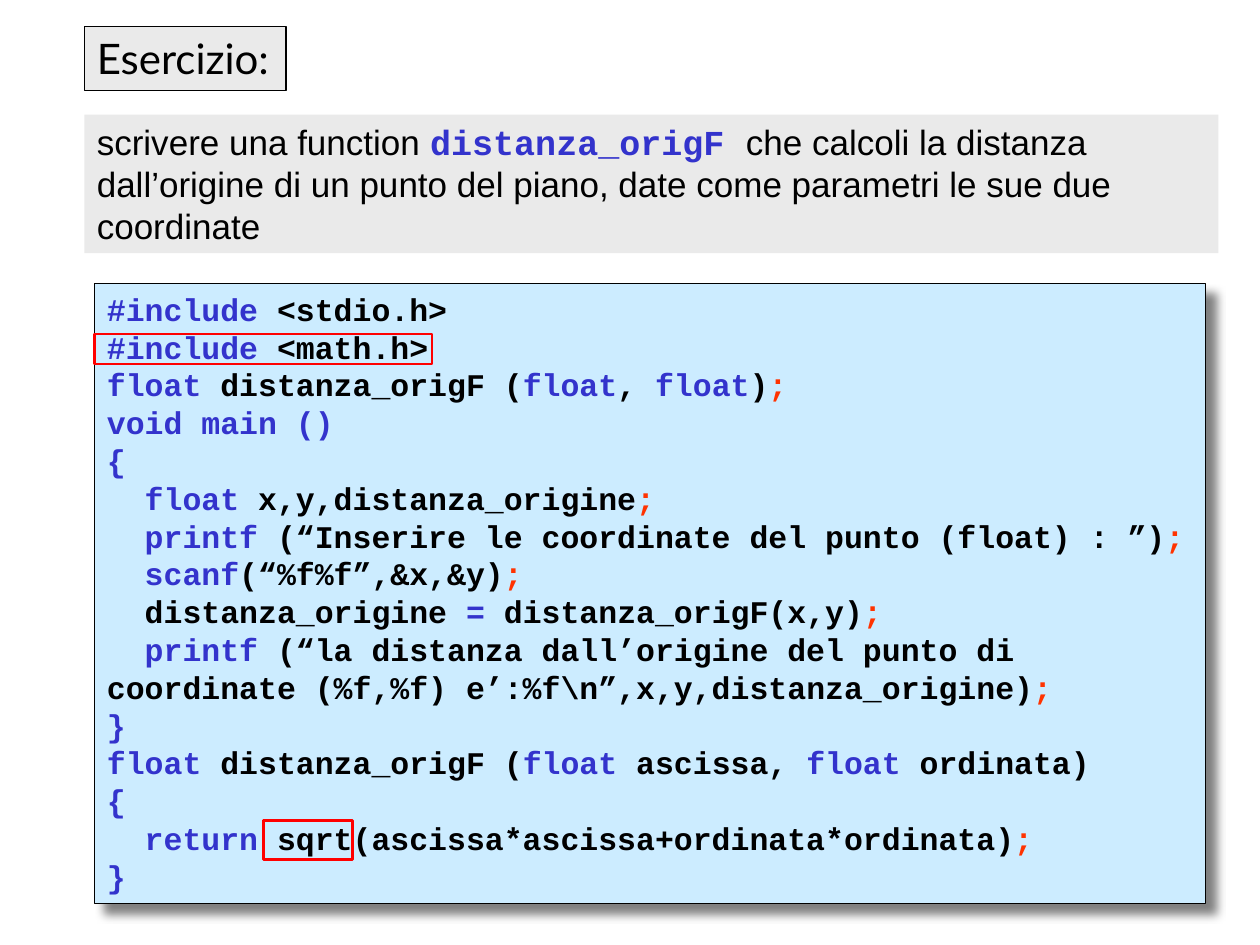
from lxml.etree import SubElement
from pptx import Presentation
from pptx.dml.color import RGBColor
from pptx.enum.shapes import MSO_SHAPE
from pptx.enum.text import MSO_ANCHOR, PP_ALIGN
from pptx.oxml.ns import qn
from pptx.util import Inches, Pt

BLACK = RGBColor(0x00, 0x00, 0x00)
BLUE = RGBColor(0x33, 0x33, 0xCC)
ORANGE = RGBColor(0xFF, 0x33, 0x00)
RED = RGBColor(0xFF, 0x00, 0x00)
GRAY = RGBColor(0xEA, 0xEA, 0xEA)
SKY = RGBColor(0xCC, 0xEC, 0xFF)

# Keywords stand between ~ marks; a leading > indents the line
CODE = r"""~#include~ <stdio.h>
~#include~ <math.h>
~float~ distanza_origF (~float~,~ float~);
~void main ()~
~{~
>~float~ x,y,distanza_origine;
>~printf ~(“Inserire le coordinate del punto (float) : ”);
>~scanf~(“%f%f”,&x,&y);
>distanza_origine ~= ~distanza_origF(x,y);
>~printf ~(“la distanza dall’origine del punto di coordinate (%f,%f) e’:%f\n”,x,y,distanza_origine);
~}~
~float~ distanza_origF (~float ~ascissa,~ float ~ordinata)
~{~
>~return ~sqrt(ascissa*ascissa+ordinata*ordinata);
~}~"""

deck = Presentation()
deck.slide_width, deck.slide_height = Inches(10), Inches(7.5)
page = deck.slides.add_slide(deck.slide_layouts[6])


def add_box(left, top, width, height, fill=None, line=None, weight=0.75):
    box = page.shapes.add_shape(MSO_SHAPE.RECTANGLE, Inches(left), Inches(top),
                                Inches(width), Inches(height))
    box.shadow.inherit = False
    if fill is None:
        box.fill.background()
    else:
        box.fill.solid()
        box.fill.fore_color.rgb = fill
    if line is None:
        box.line.fill.background()
    else:
        box.line.color.rgb = line
        box.line.width = Pt(weight)
    box.text_frame.word_wrap = True
    box.text_frame.vertical_anchor = MSO_ANCHOR.TOP
    box.text_frame.paragraphs[0].alignment = PP_ALIGN.LEFT
    return box


def add_span(para, text, color):
    span = para.add_run()
    span.text = text
    span.font.color.rgb = color
    return span


# Heading
heading = add_box(0.67, 0.21, 1.6, 0.51, GRAY, BLACK)
heading.text_frame.word_wrap = False
para = heading.text_frame.paragraphs[0]
para.font.name, para.font.size = "Lato", Pt(24)
add_span(para, "Esercizio:", BLACK)

# Program listing with a drop shadow
listing = add_box(0.75, 2.25, 8.82, 4.92, SKY, BLACK)
effects = listing._element.spPr.find(qn("a:effectLst"))
shadow = SubElement(effects, qn("a:outerShdw"), blurRad=str(Pt(5)), dist=str(Pt(8.5)),
                    dir=str(45 * 60000), algn="ctr", rotWithShape="0")
SubElement(shadow, qn("a:srgbClr"), val="808080")

for number, line in enumerate(CODE.splitlines()):
    frame = listing.text_frame
    para = frame.add_paragraph() if number else frame.paragraphs[0]
    para.alignment = PP_ALIGN.LEFT
    para.font.name, para.font.size, para.font.bold = "Courier New", Pt(18), True
    if line.startswith(">"):
        para._p.get_or_add_pPr().set("indent", str(Inches(0.3)))
    for index, part in enumerate(line.lstrip(">").split("~")):
        code = part.removesuffix(";")
        if code:
            add_span(para, code, BLUE if index % 2 else BLACK)
        if code != part:
            add_span(para, ";", ORANGE)

# Red frames around the header file and the library call
add_box(0.75, 2.65, 2.68, 0.24, line=RED, weight=1.5)
add_box(2.09, 6.51, 0.71, 0.31, line=RED, weight=1.5)

# Task
task = add_box(0.67, 0.91, 9, 1.1, GRAY)
para = task.text_frame.paragraphs[0]
para.font.name, para.font.size = "Arial", Pt(20)
add_span(para, "scrivere una function ", BLACK)
function_name = add_span(para, "distanza_origF ", BLUE)
function_name.font.name, function_name.font.bold = "Courier New", True
add_span(para, "che calcoli la distanza dall’origine di un punto del piano, "
               "date come parametri le sue due coordinate", BLACK)

deck.save("out.pptx")
